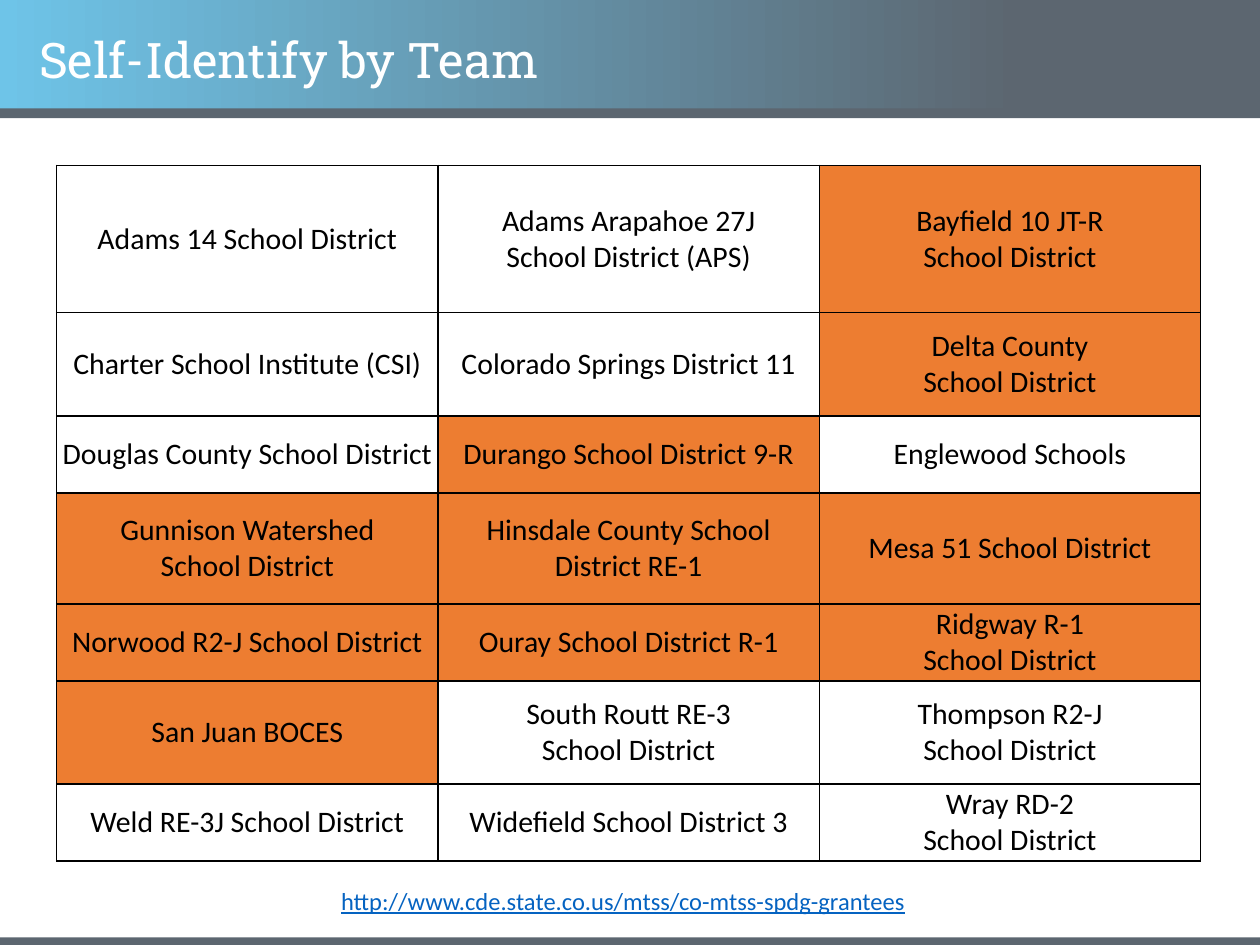
import pptx
import pptx.util
import pptx.dml.color
import pptx.enum.shapes
import pptx.enum.text
import pptx.oxml

Pt = pptx.util.Pt
RGB = pptx.dml.color.RGBColor.from_string
PP_ALIGN = pptx.enum.text.PP_ALIGN
MIDDLE = pptx.enum.text.MSO_ANCHOR.MIDDLE
RECT = pptx.enum.shapes.MSO_SHAPE.RECTANGLE
NS = "http://schemas.openxmlformats.org/drawingml/2006/main"

COLORS = {
    "sky": "6EC4E8",
    "slate": "5C6670",
    "orange": "ED7D31",
    "white": "FFFFFF",
    "black": "000000",
    "link": "0563C1",
}


def add_run(p, text, font, size, color):
    r = p.add_run()
    r.text = text
    r.font.name = font
    r.font.size = Pt(size)
    r.font.color.rgb = RGB(COLORS[color])
    return r


def set_borders(cell, color, width):
    tc_pr = cell._tc.get_or_add_tcPr()
    for i, side in enumerate(("lnL", "lnR", "lnT", "lnB")):
        tc_pr.insert(i, pptx.oxml.parse_xml(
            f'<a:{side} xmlns:a="{NS}" w="{Pt(width)}"><a:solidFill>'
            f'<a:srgbClr val="{COLORS[color]}"/></a:solidFill></a:{side}>'))


prs = pptx.Presentation()
prs.slide_width = Pt(720)
prs.slide_height = Pt(540)
s = prs.slides.add_slide(prs.slide_layouts[5])

for top, height in ((0, 62.6), (62, 5.6), (535.6, 5.6)):
    bar = s.shapes.add_shape(RECT, Pt(0), Pt(top), Pt(720), Pt(height))
    bar.shadow.inherit = False
    bar.line.fill.background()
    if top == 0:
        bar.fill.gradient()
        bar.fill.gradient_angle = 0
        stops = ((0, "sky"), (0.81, "slate"))
        for stop, (position, color) in zip(bar.fill.gradient_stops, stops):
            stop.position = position
            stop.color.rgb = RGB(COLORS[color])
    else:
        bar.fill.solid()
        bar.fill.fore_color.rgb = RGB(COLORS["slate"])

title = s.shapes.title
s.shapes._spTree.append(title._element)
title.left, title.top = Pt(15.1), Pt(15.1)
title.width, title.height = Pt(620.6), Pt(41)
tf = title.text_frame
tf.auto_size = pptx.enum.text.MSO_AUTO_SIZE.NONE
tf.word_wrap = True
tf.vertical_anchor = MIDDLE
p = tf.paragraphs[0]
p.alignment = PP_ALIGN.LEFT
p.line_spacing = 0.9
add_run(p, "Self-Identify by Team", "Roboto Slab", 28, "white")

rows = [
    (84.2, [("Adams 14 School District", "white"),
            ("Adams Arapahoe 27J\nSchool District (APS)", "white"),
            ("Bayfield 10 JT-R\nSchool District", "orange")]),
    (59, [("Charter School Institute (CSI)", "white"),
          ("Colorado Springs District 11", "white"),
          ("Delta County\nSchool District", "orange")]),
    (44, [("Douglas County School District", "white"),
          ("Durango School District 9-R", "orange"),
          ("Englewood Schools", "white")]),
    (63.4, [("Gunnison Watershed\nSchool District", "orange"),
            ("Hinsdale County School\nDistrict RE-1", "orange"),
            ("Mesa 51 School District", "orange")]),
    (44, [("Norwood R2-J School District", "orange"),
          ("Ouray School District R-1", "orange"),
          ("Ridgway R-1\nSchool District", "orange")]),
    (59, [("San Juan BOCES", "orange"),
          ("South Routt RE-3\nSchool District", "white"),
          ("Thompson R2-J\nSchool District", "white")]),
    (44, [("Weld RE-3J School District", "white"),
          ("Widefield School District 3", "white"),
          ("Wray RD-2\nSchool District", "white")]),
]
col_width = 217.9
table = s.shapes.add_table(len(rows), 3, Pt(32.4), Pt(94.5), Pt(3 * col_width),
                           Pt(sum(height for height, _ in rows))).table
table.first_row = False
table.horz_banding = False
for col in table.columns:
    col.width = Pt(col_width)
for i, (height, districts) in enumerate(rows):
    table.rows[i].height = Pt(height)
    for j, (name, color) in enumerate(districts):
        cell = table.cell(i, j)
        cell.fill.solid()
        cell.fill.fore_color.rgb = RGB(COLORS[color])
        set_borders(cell, "black", 1)
        cell.vertical_anchor = MIDDLE
        cell.margin_left = cell.margin_right = Pt(0.7)
        cell.margin_top = cell.margin_bottom = Pt(0.7)
        p = cell.text_frame.paragraphs[0]
        p.alignment = PP_ALIGN.CENTER
        for n, line in enumerate(name.split("\n")):
            if n:
                p.add_line_break()
            add_run(p, line, "Calibri", 17, "black")

link = s.shapes.add_textbox(Pt(132.5), Pt(502.6), Pt(447.1), Pt(24.5))
tf = link.text_frame
tf.word_wrap = True
p = tf.paragraphs[0]
p.alignment = PP_ALIGN.CENTER
r = add_run(p, "http://www.cde.state.co.us/mtss/co-mtss-spdg-grantees",
            "Calibri", 14, "link")
r.font.underline = True

prs.save("out.pptx")
